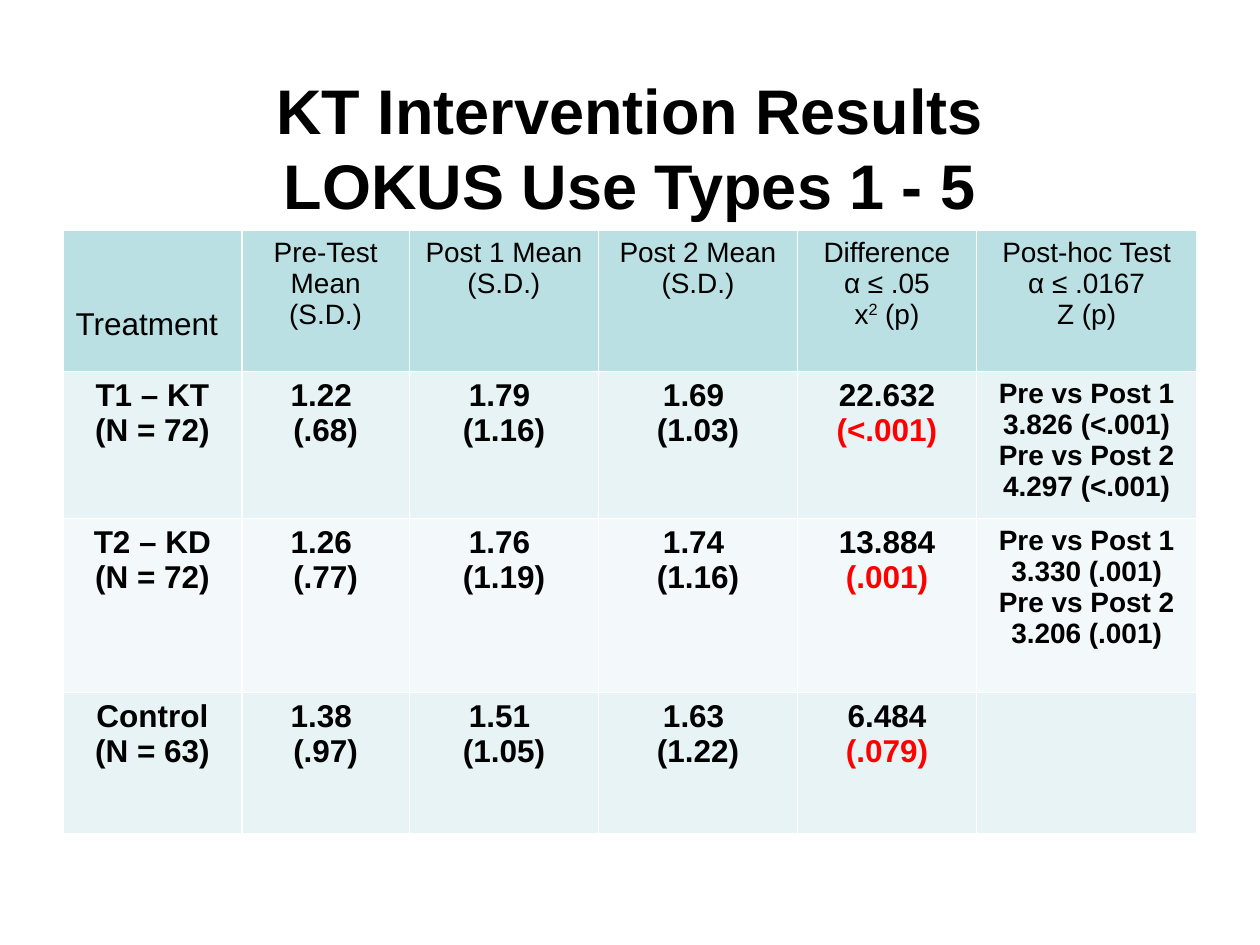
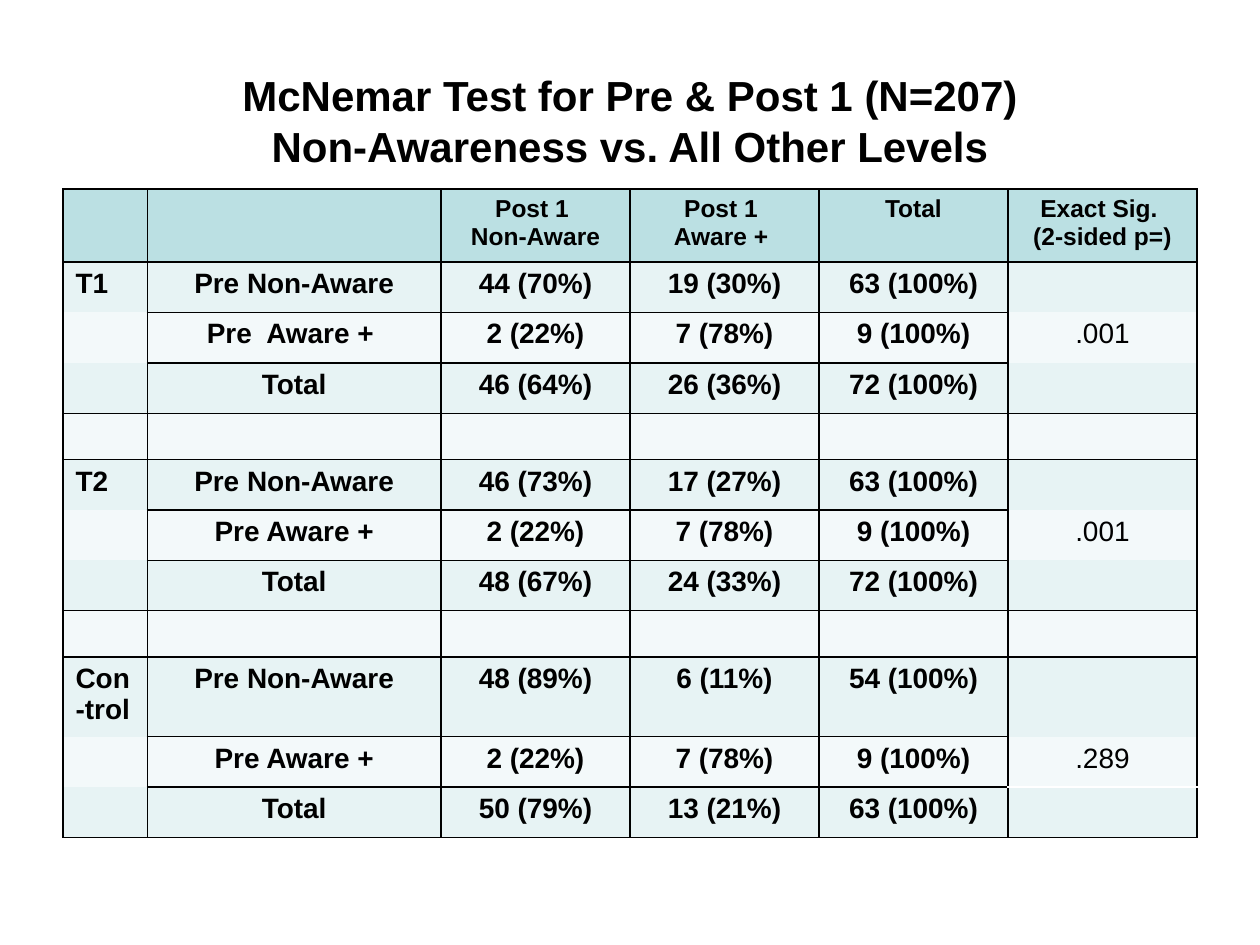
import pptx
import pptx.util
import pptx.dml.color
import pptx.enum.text
import pptx.oxml.ns
import lxml.etree

Inches = pptx.util.Inches
Pt = pptx.util.Pt
ALIGN = pptx.enum.text.PP_ALIGN
ANCHOR = pptx.enum.text.MSO_ANCHOR

FONT = "Arial"
COLORS = {
    "text": "000000",
    "accent": "FF0000",
    "line": "000000",
    "white": "FFFFFF",
    "header": "BBE0E3",
    "band_dark": "E7F3F4",
    "band_light": "F3F9FA",
}
SIDES = {"left": "lnL", "right": "lnR", "top": "lnT", "bottom": "lnB"}

USE_HEADERS = [
    "Treatment",
    "Pre-Test Mean\n(S.D.)",
    "Post 1 Mean\n(S.D.)",
    "Post 2 Mean\n(S.D.)",
    "Difference\nα ≤ .05\nx^2^ (p)",
    "Post-hoc Test\nα ≤ .0167\nZ (p)",
]
USE_ROWS = [
    ["T1 – KT\n(N = 72)", "1.22 \n(.68)", "1.79 \n(1.16)", "1.69 \n(1.03)",
     "22.632 |(<.001)", "Pre vs Post 1\n3.826 (<.001)\nPre vs Post 2\n4.297 (<.001)"],
    ["T2 – KD\n(N = 72)", "1.26 \n(.77)", "1.76 \n(1.19)", "1.74 \n(1.16)",
     "13.884 |(.001)", "Pre vs Post 1\n3.330 (.001)\nPre vs Post 2\n3.206 (.001)"],
    ["Control\n(N = 63)", "1.38 \n(.97)", "1.51 \n(1.05)", "1.63 \n(1.22)",
     "6.484 |(.079)", ""],
]
MCNEMAR_HEADERS = ["", "", "Post 1 \nNon-Aware", "Post 1 \nAware + ", "Total",
                   "Exact Sig. \n(2-sided p=)"]
MCNEMAR_ROWS = [
    ["T1", "Pre Non-Aware", "44 (70%)", "19 (30%)", "63 (100%)", ""],
    ["", "Pre  Aware + ", "2 (22%)", "7 (78%)", "9 (100%)", ".001"],
    ["", "Total", "46 (64%)", "26 (36%)", "72 (100%)", ""],
    [""] * 6,
    ["T2", "Pre Non-Aware", "46 (73%)", "17 (27%)", "63 (100%)", ""],
    ["", "Pre Aware +", "2 (22%)", "7 (78%)", "9 (100%)", ".001"],
    ["", "Total", "48 (67%)", "24 (33%)", "72 (100%)", ""],
    [""] * 6,
    ["Con-trol", "Pre Non-Aware", "48 (89%)", "6 (11%)", "54 (100%)", ""],
    ["", "Pre Aware +", "2 (22%)", "7 (78%)", "9 (100%)", ".289"],
    ["", "Total", "50 (79%)", "13 (21%)", "63 (100%)", ""],
]


def rgb(name):
    return pptx.dml.color.RGBColor.from_string(COLORS[name])


def add_run(p, text, size, bold, color, raised=False):
    r = p.add_run()
    r.text = text
    r.font.name = FONT
    r.font.size = Pt(size)
    r.font.bold = bold
    r.font.color.rgb = rgb(color)
    if raised:
        r.font._element.set("baseline", "30000")


def write_text(tf, text, size=16, bold=True, color="text", align=ALIGN.CENTER):
    """Lines are split at newlines, | starts accent text, ^ encloses raised text, \\v breaks a line."""
    tf.word_wrap = True
    for i, line in enumerate(text.split("\n")):
        p = tf.paragraphs[0] if i == 0 else tf.add_paragraph()
        p.alignment = align
        if not line:
            end = lxml.etree.SubElement(p._p, pptx.oxml.ns.qn("a:endParaRPr"))
            end.set("sz", str(size * 100))
        for row, part in enumerate(line.split("\v")):
            if row:
                p.add_line_break()
            for j, piece in enumerate(part.split("|")):
                for k, run in enumerate(piece.split("^")):
                    if run:
                        add_run(p, run, size, bold, "accent" if j else color, k == 1)


def set_border(cell, side, color):
    tc_pr = cell._tc.get_or_add_tcPr()
    ln = lxml.etree.SubElement(tc_pr, pptx.oxml.ns.qn("a:" + SIDES[side]))
    if color is None:
        ln.set("w", "0")
        lxml.etree.SubElement(ln, pptx.oxml.ns.qn("a:noFill"))
        return
    ln.set("w", str(Pt(1)))
    fill = lxml.etree.SubElement(ln, pptx.oxml.ns.qn("a:solidFill"))
    lxml.etree.SubElement(fill, pptx.oxml.ns.qn("a:srgbClr")).set("val", COLORS[color])


def add_title(s, box, text, size):
    tf = s.shapes.add_textbox(*map(Inches, box)).text_frame
    tf.vertical_anchor = ANCHOR.MIDDLE
    write_text(tf, text, size=size)


def add_banded_table(s, left, top, widths, heights, rows, text_format, border):
    frame = s.shapes.add_table(len(rows), len(widths), Inches(left), Inches(top),
                               Inches(sum(widths)), Inches(sum(heights)))
    table = frame.table
    table.first_row = table.horz_banding = False
    for column, width in zip(table.columns, widths):
        column.width = Inches(width)
    for r, (row, height) in enumerate(zip(rows, heights)):
        table.rows[r].height = Inches(height)
        band = "header" if r == 0 else "band_dark" if r % 2 else "band_light"
        for c, text in enumerate(row):
            cell = table.cell(r, c)
            write_text(cell.text_frame, text, **text_format(r, c))
            for side in SIDES:
                set_border(cell, side, border(r, c, side))
            cell.fill.solid()
            cell.fill.fore_color.rgb = rgb(band)
    return table


def use_format(r, c):
    if r == 0:
        return {"size": 16 if c else 18, "bold": False,
                "align": ALIGN.CENTER if c else ALIGN.LEFT}
    return {"size": 16 if c == 5 else 18}


def mcnemar_format(r, c):
    if r == 0:
        return {"size": 14}
    return {"bold": c != 5, "align": ALIGN.CENTER if c else ALIGN.LEFT}


def mcnemar_border(r, c, side):
    if c == 5 and (r, side) in ((10, "bottom"), (11, "top")):
        return "white"
    step = (r - 1) % 4
    inside_group = (side == "bottom" and step in (0, 1)) or (side == "top" and step in (1, 2))
    if r and c in (0, 5) and inside_group:
        return None
    return "line"


def use_types_slide(prs):
    s = prs.slides.add_slide(prs.slide_layouts[6])
    add_title(s, (0.5, 0.5, 9, 1.33), "KT Intervention Results\vLOKUS Use Types 1 - 5", 36)
    table = add_banded_table(
        s, 0.5, 1.83, [1.42, 1.33, 1.5, 1.58, 1.42, 1.75], [1.12, 1.12, 1.38, 1.12],
        [USE_HEADERS] + USE_ROWS, use_format, lambda r, c, side: "white")
    treatment = table.cell(0, 0)
    treatment.vertical_anchor = ANCHOR.BOTTOM
    treatment.margin_bottom = Inches(0.23)


def mcnemar_slide(prs):
    s = prs.slides.add_slide(prs.slide_layouts[6])
    add_title(s, (0.5, 0.58, 9, 0.75),
              "McNemar Test for Pre & Post 1 (N=207)\vNon-Awareness vs. All Other Levels", 24)
    group = [0.4] * 3
    heights = [0.58] + (group + [0.35]) * 2 + [0.59, 0.4, 0.4]
    add_banded_table(s, 0.5, 1.5, [0.67, 2.33] + [1.5] * 4, heights,
                     [MCNEMAR_HEADERS] + MCNEMAR_ROWS, mcnemar_format, mcnemar_border)


def main():
    prs = pptx.Presentation()
    prs.slide_width, prs.slide_height = Inches(10), Inches(7.5)
    use_types_slide(prs)
    mcnemar_slide(prs)
    prs.save("out.pptx")


if __name__ == "__main__":
    main()
